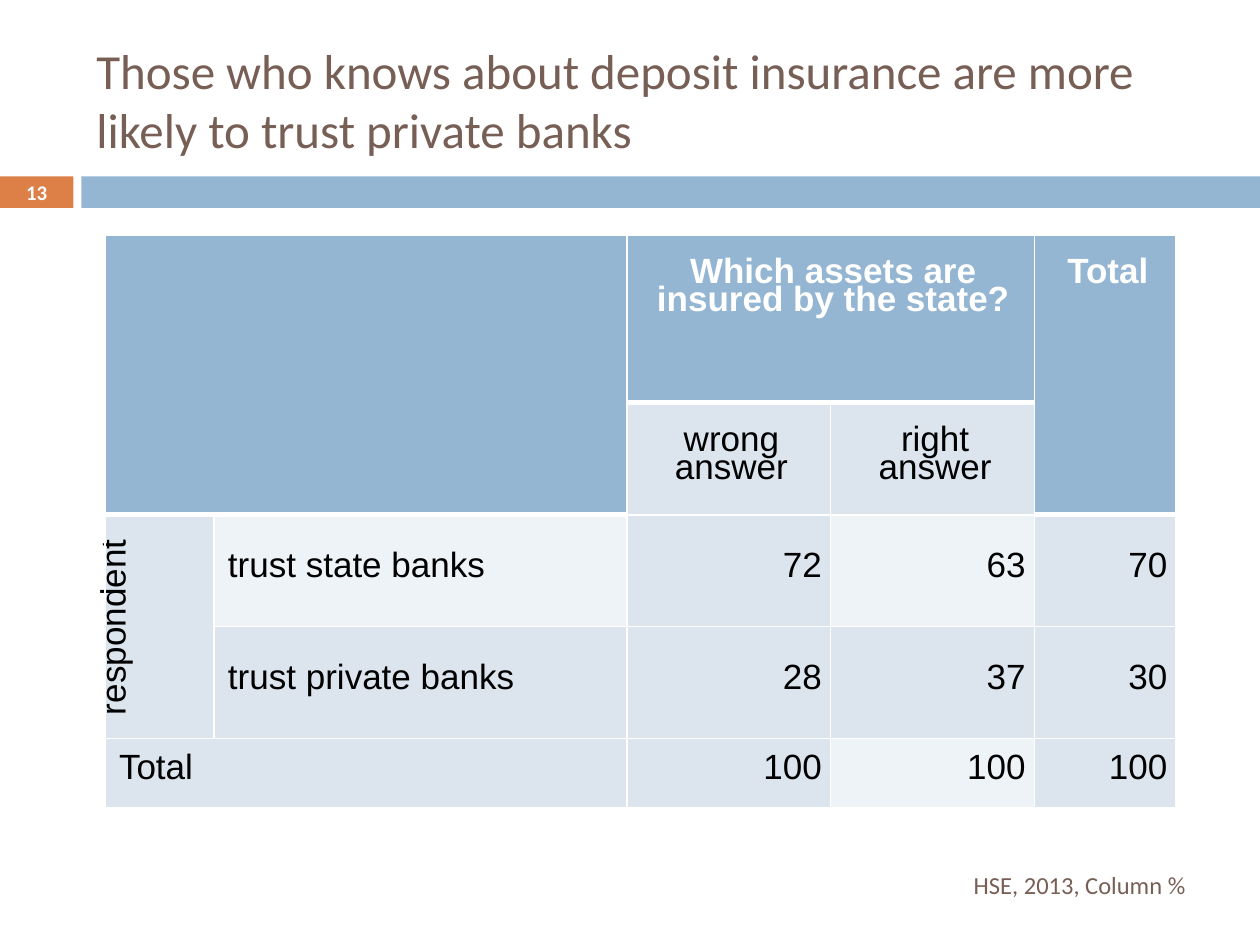
import pptx
import pptx.util
import pptx.dml.color
import pptx.enum.shapes
import pptx.enum.text
import pptx.oxml.ns
import lxml.etree

Pt = pptx.util.Pt
ALIGN = pptx.enum.text.PP_ALIGN
MID = pptx.enum.text.MSO_ANCHOR.MIDDLE
TOP = pptx.enum.text.MSO_ANCHOR.TOP

THEME = {
    "blue": "94B6D2", "orange": "DD8047", "brown": "775F55",
    "white": "FFFFFF", "black": "000000", "tint": "DCE5EE", "pale": "EEF3F7",
    "head": "Calibri", "body": "Arial",
    "title": 28, "cell": 20, "note": 14, "page": 11.9,
}

BARS = [
    ((0, 100.8, 42, 18), "orange"),
    ((46.5, 100.8, 673.5, 18), "blue"),
]
LABELS = [
    ("Those who knows about deposit insurance are more likely to trust private banks",
     (48, 18, 642, 78), "title", "brown", ALIGN.LEFT, False),
    ("HSE, 2013, Column %", (450.6, 491, 234, 29), "note", "brown", ALIGN.RIGHT, False),
    ("13", (0, 100, 42, 19.5), "page", "white", ALIGN.CENTER, True),
]

SPOT = (60, 134.2)
COLS = [62.3, 236, 116.4, 116.4, 81]
ROWS = [96, 64, 64, 64, 39.3]
CELLS = [
    ["", None, "Which assets are insured by the state?", None, "Total"],
    [None, None, "wrong answer", "right answer", None],
    [" respondent", "trust state banks", "72", "63", "70"],
    [None, "trust private banks", "28", "37", "30"],
    ["Total", None, "100", "100", "100"],
]
SPANS = {(0, 0): (2, 2), (0, 2): (1, 2), (0, 4): (2, 1), (2, 0): (2, 1), (4, 0): (1, 2)}
HEAD = {(0, col) for col in range(5)} | {(1, 0), (1, 1), (1, 4)}
PALE = {(2, 1), (2, 3), (4, 3)}
LINE, LEAD, PAD, INDENT = 1, 16, 5, 3
THICK = 3


def color(name):
    return pptx.dml.color.RGBColor.from_string(THEME[name])


def style(para, size, face, ink, align, bold):
    para.alignment = align
    font = para.font
    font.size, font.name, font.bold = Pt(THEME[size]), THEME[face], bold
    font.color.rgb = color(ink)


def add_bar(slide, box, fill):
    bar = slide.shapes.add_shape(pptx.enum.shapes.MSO_SHAPE.RECTANGLE, *map(Pt, box))
    bar.shadow.inherit = False
    bar.fill.solid()
    bar.fill.fore_color.rgb = color(fill)
    bar.line.fill.background()


def add_label(slide, text, box, size, ink, align, bold):
    frame = slide.shapes.add_textbox(*map(Pt, box)).text_frame
    frame.word_wrap = True
    frame.vertical_anchor = MID
    frame.text = text
    style(frame.paragraphs[0], size, "head", ink, align, bold)


def add_rules(cell, widths):
    props = cell._tc.get_or_add_tcPr()
    qn = pptx.oxml.ns.qn
    for side, width in widths.items():
        rule = lxml.etree.SubElement(props, qn("a:ln" + side), w=str(Pt(width)))
        fill = lxml.etree.SubElement(rule, qn("a:solidFill"))
        lxml.etree.SubElement(fill, qn("a:srgbClr"), val=THEME["white"])


def is_edge(row, col):
    return (row, col) in HEAD and (row + 1, col) not in HEAD


def add_cell(cell, row, col, text):
    head = (row, col) in HEAD
    add_rules(cell, {
        "L": LINE, "R": LINE,
        "T": THICK if is_edge(row - 1, col) else LINE,
        "B": THICK if is_edge(row, col) else LINE,
    })
    cell.fill.solid()
    cell.fill.fore_color.rgb = color(
        "blue" if head else "pale" if (row, col) in PALE else "tint")
    cell.margin_left = cell.margin_right = Pt(PAD)
    cell.margin_top = Pt(LEAD if head and text else 0)
    cell.margin_bottom = 0
    cell.vertical_anchor = TOP if head else MID
    if not text:
        return
    cell.text = text
    para = cell.text_frame.paragraphs[0]
    align = ALIGN.CENTER if row < 2 else ALIGN.RIGHT if col > 1 else ALIGN.LEFT
    style(para, "cell", "body", "white" if head else "black", align, head)
    para.line_spacing = Pt(LEAD)
    para._p.get_or_add_pPr().set("marL", str(Pt(INDENT)))
    para._p.get_or_add_pPr().set("indent", "0")
    if (row, col) == (2, 0):
        cell._tc.get_or_add_tcPr().set("vert", "vert270")


def add_grid(slide):
    size = (sum(COLS), sum(ROWS))
    grid = slide.shapes.add_table(len(ROWS), len(COLS), *map(Pt, SPOT + size)).table
    grid.first_row = grid.horz_banding = False
    for col, width in zip(grid.columns, COLS):
        col.width = Pt(width)
    for row, height in zip(grid.rows, ROWS):
        row.height = Pt(height)
    for (row, col), (down, across) in SPANS.items():
        grid.cell(row, col).merge(grid.cell(row + down - 1, col + across - 1))
    for row, line in enumerate(CELLS):
        for col, text in enumerate(line):
            add_cell(grid.cell(row, col), row, col, text)


def main():
    deck = pptx.Presentation()
    deck.slide_width, deck.slide_height = Pt(720), Pt(540)
    slide = deck.slides.add_slide(deck.slide_layouts[6])
    for bar in BARS:
        add_bar(slide, *bar)
    add_grid(slide)
    for label in LABELS:
        add_label(slide, *label)
    deck.save("out.pptx")


if __name__ == "__main__":
    main()
